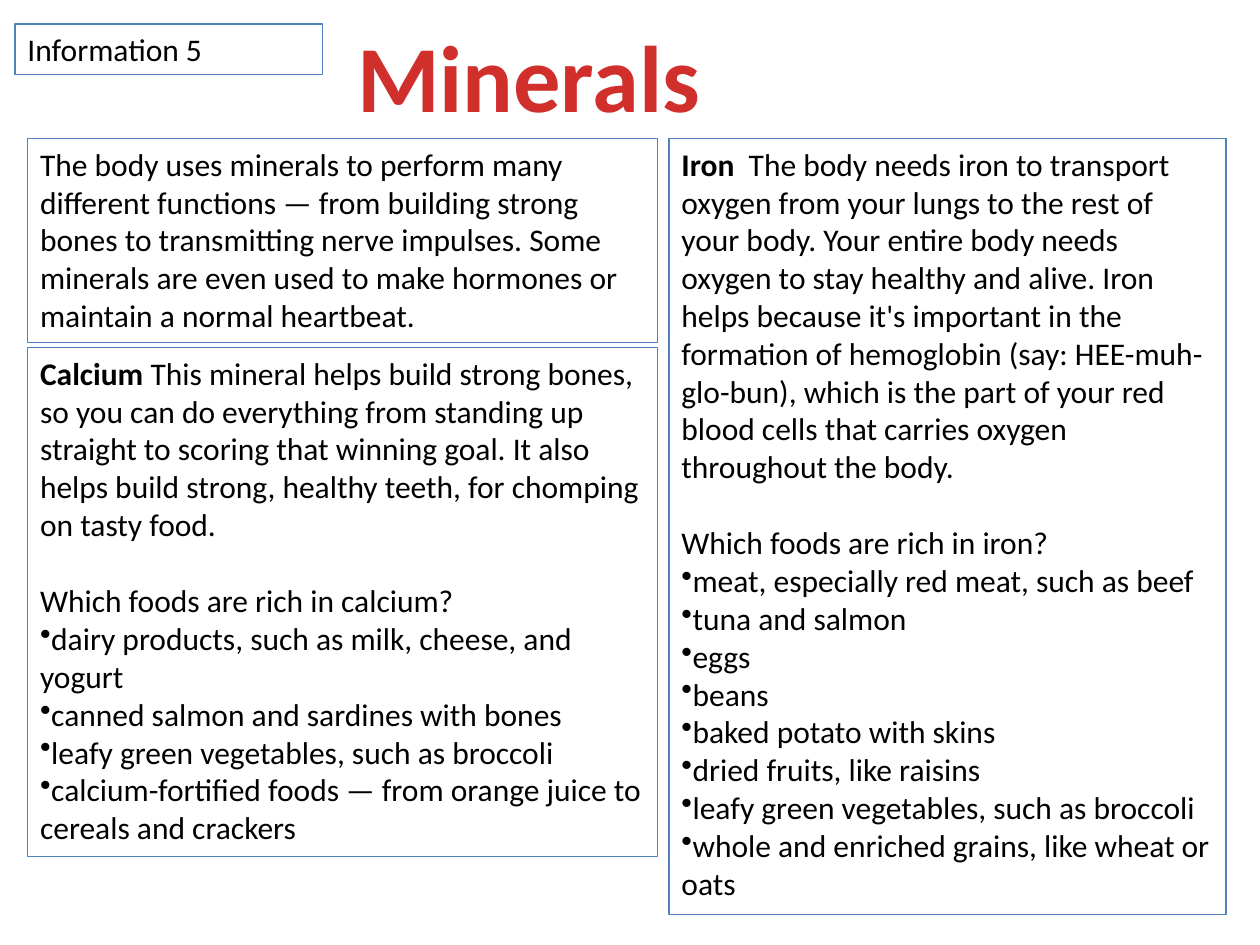
from lxml import etree
from pptx import Presentation
from pptx.dml.color import RGBColor
from pptx.enum import shapes, text
from pptx.oxml import ns
from pptx.util import Inches, Pt

BLACK = RGBColor(0x00, 0x00, 0x00)
BLUE = RGBColor(0x4F, 0x81, 0xBD)
RED = RGBColor(0xD0, 0x2F, 0x2C)
FONT = "Calibri"
BODY_SIZE = 18
BLANK_LINE = Pt(22)

INTRODUCTION = (
    "The body uses minerals to perform many different functions — from building "
    "strong bones to transmitting nerve impulses. Some minerals are even used to "
    "make hormones or maintain a normal heartbeat."
)
CALCIUM = (
    "This mineral helps build strong bones, so you can do everything from standing "
    "up straight to scoring that winning goal. It also helps build strong, healthy "
    "teeth, for chomping on tasty food."
)
CALCIUM_FOODS = [
    "dairy products, such as milk, cheese, and yogurt",
    "canned salmon and sardines with bones",
    "leafy green vegetables, such as broccoli",
    "calcium-fortified foods — from orange juice to cereals and crackers",
]
IRON = (
    " The body needs iron to transport oxygen from your lungs to the rest of your "
    "body. Your entire body needs oxygen to stay healthy and alive. Iron helps "
    "because it's important in the formation of hemoglobin (say: HEE-muh-glo-bun), "
    "which is the part of your red blood cells that carries oxygen throughout the body."
)
IRON_FOODS = [
    "meat, especially red meat, such as beef",
    "tuna and salmon",
    "eggs",
    "beans",
    "baked potato with skins",
    "dried fruits, like raisins",
    "leafy green vegetables, such as broccoli",
    "whole and enriched grains, like wheat or oats",
]


def add_run(paragraph, wording, size=BODY_SIZE, color=BLACK, bold=False):
    run = paragraph.add_run()
    run.text = wording
    run.font.name = FONT
    run.font.size = Pt(size)
    run.font.bold = bold
    run.font.color.rgb = color


def add_bullet(paragraph):
    properties = paragraph._p.get_or_add_pPr()
    properties.set("marL", "0")
    properties.set("indent", "0")
    bullet = etree.SubElement(properties, ns.qn("a:buChar"))
    bullet.set("char", "•")


def add_panel(slide, box):
    panel = slide.shapes.add_shape(
        shapes.MSO_SHAPE.RECTANGLE, *(Inches(length) for length in box)
    )
    panel.shadow.inherit = False
    panel.fill.background()
    panel.line.color.rgb = BLUE
    panel.line.width = Pt(0.75)
    text_frame = panel.text_frame
    text_frame.word_wrap = True
    text_frame.auto_size = text.MSO_AUTO_SIZE.SHAPE_TO_FIT_TEXT
    text_frame.vertical_anchor = text.MSO_ANCHOR.TOP
    text_frame.paragraphs[0].alignment = text.PP_ALIGN.LEFT
    return text_frame


def add_text_panel(slide, box, wording):
    add_run(add_panel(slide, box).paragraphs[0], wording)


def add_mineral_panel(slide, box, name, description, question, foods):
    text_frame = add_panel(slide, box)
    opening = text_frame.paragraphs[0]
    add_run(opening, f"{name} ", bold=True)
    add_run(opening, description)
    for position, wording in enumerate([question, *foods]):
        paragraph = text_frame.add_paragraph()
        paragraph.alignment = text.PP_ALIGN.LEFT
        if position == 0:
            paragraph.space_before = BLANK_LINE
        else:
            add_bullet(paragraph)
        add_run(paragraph, wording)


def add_title(slide, box, wording):
    title = slide.shapes.add_textbox(*(Inches(length) for length in box))
    text_frame = title.text_frame
    text_frame.word_wrap = False
    text_frame.auto_size = text.MSO_AUTO_SIZE.SHAPE_TO_FIT_TEXT
    paragraph = text_frame.paragraphs[0]
    paragraph.alignment = text.PP_ALIGN.CENTER
    add_run(paragraph, wording, size=54, color=RED, bold=True)


def main():
    presentation = Presentation()
    presentation.slide_width = Inches(10)
    presentation.slide_height = Inches(7.5)
    slide = presentation.slides.add_slide(presentation.slide_layouts[6])

    add_text_panel(slide, (0.12, 0.19, 2.44, 0.4), "Information 5")
    add_title(slide, (2.72, 0.09, 2.95, 1.01), "Minerals")
    add_text_panel(slide, (0.22, 1.1, 5, 1.62), INTRODUCTION)
    add_mineral_panel(
        slide, (0.22, 2.76, 5, 4.04), "Calcium", CALCIUM,
        "Which foods are rich in calcium?", CALCIUM_FOODS,
    )
    add_mineral_panel(
        slide, (5.31, 1.1, 4.42, 6.16), "Iron", IRON,
        "Which foods are rich in iron?", IRON_FOODS,
    )
    presentation.save("out.pptx")


if __name__ == "__main__":
    main()
